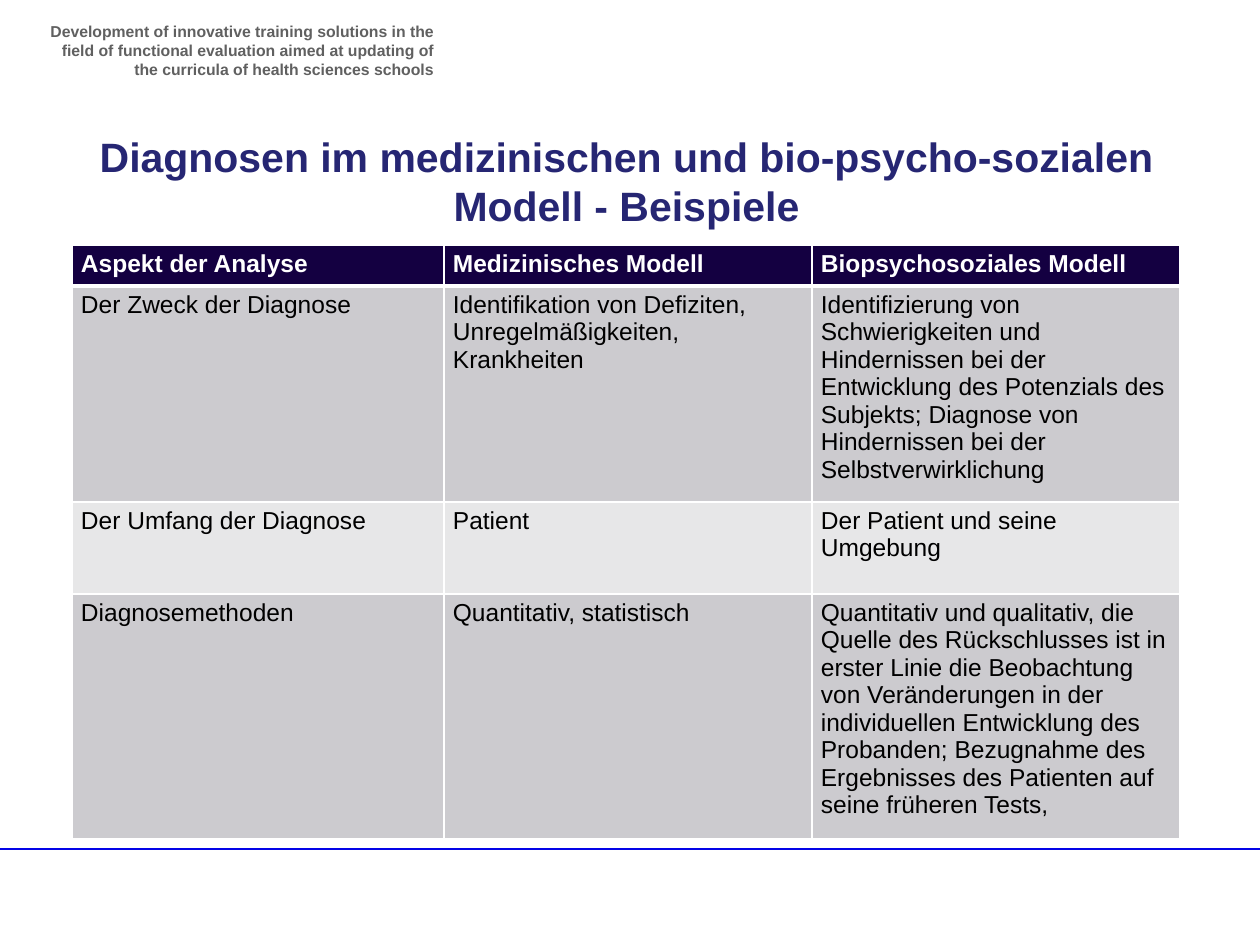
from pptx import Presentation
from pptx.dml.color import RGBColor as RGB
from pptx.enum.text import MSO_ANCHOR as ANCHOR, PP_ALIGN as ALIGN
from pptx.enum.shapes import MSO_CONNECTOR as CONNECTOR
from pptx.oxml import parse_xml
from pptx.oxml.ns import nsdecls
from pptx.util import Pt

PX = 914400 // 126  # EMU in one px
COLORS = {
    "rule": "0404E6", "project": "606060", "title": "262673",
    "header": "140041", "band": "CCCBCF", "light": "E7E7E8",
    "white": "FFFFFF", "black": "000000",
}


def style(paragraph, size, color, bold):
    font = paragraph.font
    font.name, font.size, font.bold = "Arial", Pt(size), bold
    font.color.rgb = RGB.from_string(COLORS[color])


def add_text(box, text, align, size, color):
    frame = slide.shapes.add_textbox(*(n * PX for n in box)).text_frame
    frame.word_wrap = True
    frame.vertical_anchor = ANCHOR.TOP
    paragraph = frame.paragraphs[0]
    paragraph.text = text
    paragraph.alignment = align
    style(paragraph, size, color, True)


prs = Presentation()
prs.slide_width, prs.slide_height = 1260 * PX, 945 * PX
slide = prs.slides.add_slide(prs.slide_layouts[6])

# Footer rule
rule = slide.shapes.add_connector(
    CONNECTOR.STRAIGHT, -6 * PX, 849 * PX, 1260 * PX, 849 * PX)
rule.line.color.rgb = RGB.from_string(COLORS["rule"])
rule.line.width = Pt(1)
rule._element.spPr.append(parse_xml(f"<a:effectLst {nsdecls('a')}/>"))

# Project name and title
add_text((35, 16, 411, 59),
         "Development of innovative training solutions in the ﬁeld of functional "
         "evaluation aimed at updating of the curricula of health sciences schools",
         ALIGN.RIGHT, 9, "project")
add_text((25, 125, 1203, 137),
         "Diagnosen im medizinischen und bio-psycho-sozialen Modell - Beispiele",
         ALIGN.CENTER, 23.4, "title")

# Comparison of the two models
comparison = [
    ("Aspekt der Analyse", "Medizinisches Modell", "Biopsychosoziales Modell"),
    ("Der Zweck der Diagnose",
     "Identifikation von Defiziten, Unregelmäßigkeiten, Krankheiten",
     "Identifizierung von Schwierigkeiten und Hindernissen bei der Entwicklung "
     "des Potenzials des Subjekts; Diagnose von Hindernissen bei der "
     "Selbstverwirklichung"),
    ("Der Umfang der Diagnose", "Patient", "Der Patient und seine Umgebung"),
    ("Diagnosemethoden", "Quantitativ, statistisch",
     "Quantitativ und qualitativ, die Quelle des Rückschlusses ist in erster "
     "Linie die Beobachtung von Veränderungen in der individuellen Entwicklung "
     "des Probanden; Bezugnahme des Ergebnisses des Patienten auf seine "
     "früheren Tests,"),
]
column_widths = [372, 368, 368]
row_heights = [41, 202, 92, 230]
row_fills = ["header", "band", "light", "band"]

table = slide.shapes.add_table(
    len(row_heights), len(column_widths), 72 * PX, 245 * PX,
    sum(column_widths) * PX, sum(row_heights) * PX).table
for column, width in zip(table.columns, column_widths):
    column.width = width * PX

for r, aspect in enumerate(comparison):
    table.rows[r].height = row_heights[r] * PX
    is_header = r == 0
    # The edge under the header is thicker than the others
    edges = {"lnL": 1, "lnR": 1, "lnT": 3 if r == 1 else 1, "lnB": 3 if is_header else 1}
    for c, text in enumerate(aspect):
        cell = table.cell(r, c)
        cell.margin_left = cell.margin_right = 9 * PX
        cell.margin_top = cell.margin_bottom = 5 * PX
        paragraph = cell.text_frame.paragraphs[0]
        paragraph.text = text
        style(paragraph, 14, "white" if is_header else "black", is_header)
        properties = cell._tc.get_or_add_tcPr()
        for edge, points in edges.items():
            properties.append(parse_xml(
                f'<a:{edge} {nsdecls("a")} w="{Pt(points)}"><a:solidFill>'
                f'<a:srgbClr val="{COLORS["white"]}"/></a:solidFill></a:{edge}>'))
        cell.fill.solid()
        cell.fill.fore_color.rgb = RGB.from_string(COLORS[row_fills[r]])

prs.save("out.pptx")
